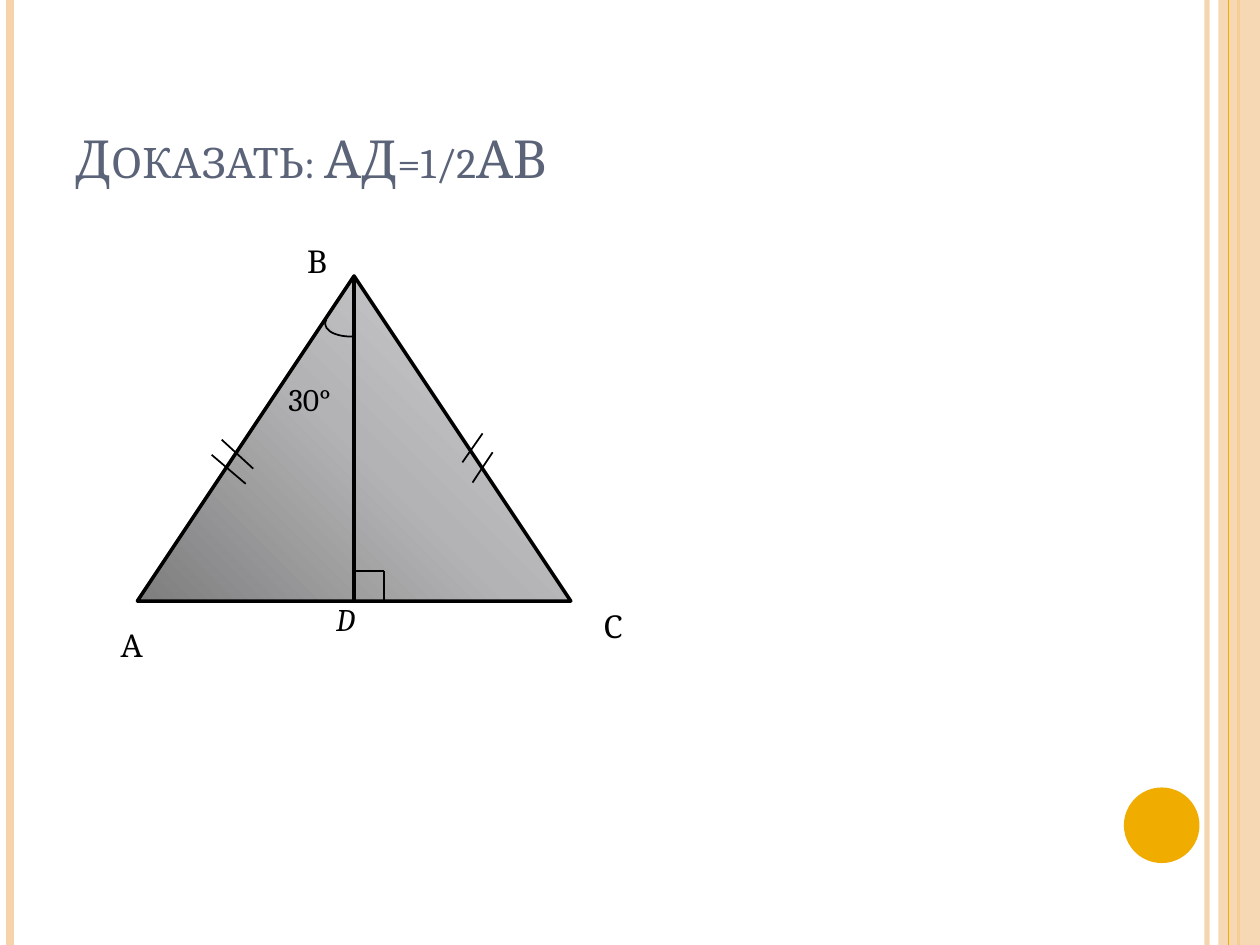
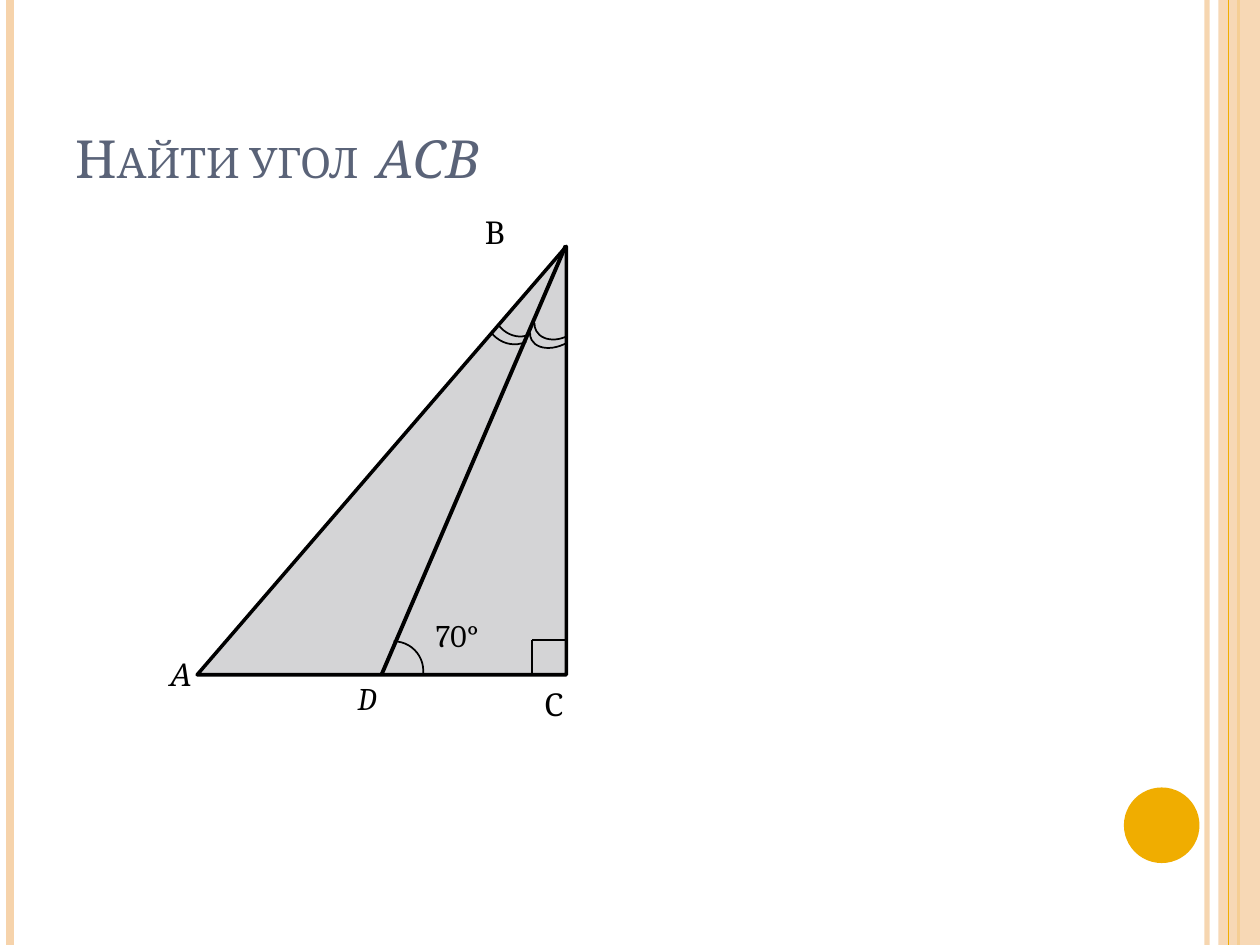
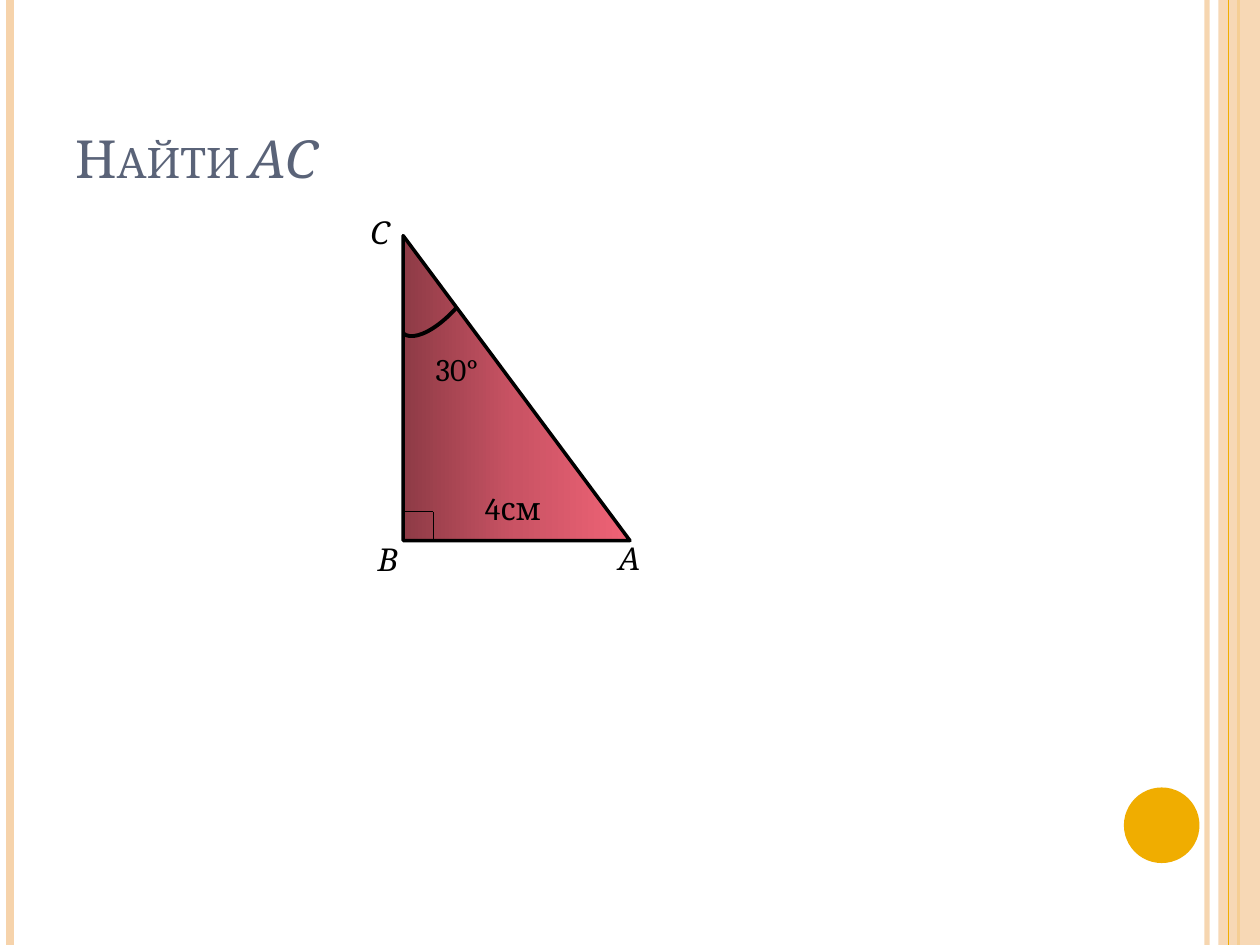
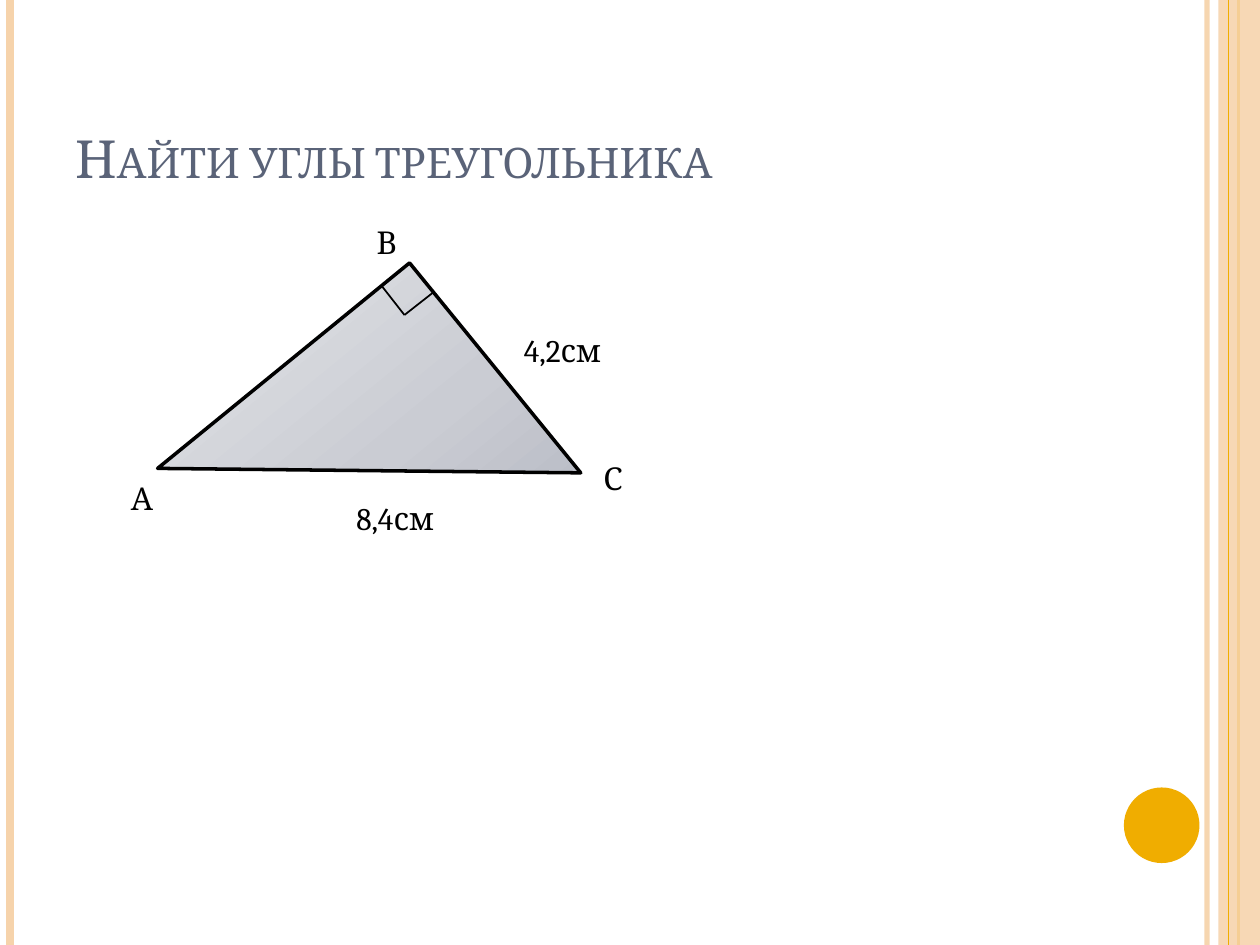
from dataclasses import dataclass
from itertools import pairwise

from lxml import etree
from pptx import Presentation
from pptx.dml.color import RGBColor
from pptx.enum.shapes import MSO_CONNECTOR, MSO_SHAPE
from pptx.enum.text import MSO_ANCHOR, MSO_AUTO_SIZE
from pptx.oxml.ns import qn
from pptx.util import Inches, Pt

STRAIGHT = MSO_CONNECTOR.STRAIGHT
RECTANGLE = MSO_SHAPE.RECTANGLE
OVAL = MSO_SHAPE.OVAL
ARC = MSO_SHAPE.ARC
ISOSCELES = MSO_SHAPE.ISOSCELES_TRIANGLE
RIGHT_TRIANGLE = MSO_SHAPE.RIGHT_TRIANGLE
BOTTOM = MSO_ANCHOR.BOTTOM
FIT_TEXT = MSO_AUTO_SIZE.SHAPE_TO_FIT_TEXT

Point = tuple[float, float]
Box = tuple[float, float, float, float]


@dataclass(frozen=True)
class Theme:
    font: str = "Cambria"
    ink: str = "000000"
    title: str = "5A6378"
    peach: str = "F6D3AB"
    amber: str = "F0AD00"
    title_size: float = 30
    label_size: float = 18
    thin: float = 1
    side: float = 2
    bold: float = 2.25
    width: float = 10
    height: float = 7.5
    label_height: float = 0.4


THEME = Theme()


@dataclass(frozen=True)
class Stripe:
    x: float
    color: str
    width: float
    opacity: int = 100


@dataclass(frozen=True)
class Triangle:
    kind: MSO_SHAPE
    box: Box
    colors: tuple[str, ...]
    angle: int = 0
    rotation: float = 0


@dataclass(frozen=True)
class Label:
    text: str
    x: float
    y: float
    width: float = 0.55
    italic: bool = False
    wrap: bool = True


@dataclass(frozen=True)
class Stroke:
    """Straight segments through the given points."""
    points: tuple[Point, ...]
    width: float = THEME.thin


@dataclass(frozen=True)
class AngleArc:
    box: Box
    start: float
    end: float
    rotation: float = 0
    width: float = THEME.thin


@dataclass(frozen=True)
class Problem:
    title: str
    triangle: Triangle
    labels: tuple[Label, ...]
    strokes: tuple[Stroke, ...]
    arcs: tuple[AngleArc, ...] = ()
    title_italic: str = ""


LEFT_STRIPES = (
    Stripe(9.58, THEME.peach, 3, 93),
    Stripe(0.08, THEME.peach, 4.5),
    Stripe(9.83, THEME.amber, 1.5),
)
RIGHT_STRIPE = Stripe(9.75, THEME.amber, 0.75)
BAND: Box = (9.67, 0, 0.33, THEME.height)
DISC: Box = (8.92, 6.25, 0.6, 0.6)
TITLE: Box = (0.5, 0.3, 8.17, 1.25)

PROBLEMS = (
    Problem(
        "Доказать: АД=1/2АВ",
        Triangle(ISOSCELES, (1.09, 2.19, 3.44, 2.58),
                 ("7E7E7F", "B3B3B5", "D4D4D6"), angle=315),
        (
            Label("А", 0.86, 4.92, 0.63),
            Label("В", 2.34, 1.87, 0.63),
            Label("С", 4.69, 4.77, 0.63),
            Label("D", 2.57, 4.71, 0.63, italic=True),
            Label("30°", 2.19, 2.97, 0.63),
        ),
        (
            Stroke(((2.81, 2.19), (2.81, 4.77)), THEME.bold),
            Stroke(((1.68, 3.61), (1.95, 3.84))),
            Stroke(((1.76, 3.49), (2.01, 3.72))),
            Stroke(((3.83, 3.44), (3.67, 3.67))),
            Stroke(((3.91, 3.59), (3.75, 3.83))),
            Stroke(((2.82, 4.53), (3.05, 4.53), (3.05, 4.77))),
        ),
        (AngleArc((2.58, 2.44, 0.47, 0.23), 162, 5.66, 175.5),),
    ),
    Problem(
        "Найти угол  ",
        Triangle(RIGHT_TRIANGLE, (1.33, 2.19, 3.4, 2.93), ("D4D4D6",), rotation=270),
        (
            Label("В", 3.75, 1.64, 0.38, wrap=False),
            Label("А", 1.25, 5.15, 0.38, italic=True, wrap=False),
            Label("D", 2.74, 5.34, italic=True),
            Label("С", 4.22, 5.39),
            Label("70°", 3.36, 4.84, 0.7),
        ),
        (
            Stroke(((4.49, 1.95), (3.03, 5.35)), THEME.bold),
            Stroke(((4.49, 5.08), (4.22, 5.08), (4.22, 5.34))),
        ),
        (
            AngleArc((2.89, 5.09, 0.47, 0.47), 162, 4.18),
            AngleArc((3.92, 2.26, 0.37, 0.42), 167.31, 0, 142),
            AngleArc((3.85, 2.27, 0.43, 0.47), 167.87, 0, 142),
            AngleArc((4.23, 2.37, 0.42, 0.31), 164.54, 10.59, 151.2),
            AngleArc((4.19, 2.43, 0.47, 0.31), 162, 9.16, 151.2),
        ),
        title_italic="АСВ",
    ),
    Problem(
        "Найти ",
        Triangle(RIGHT_TRIANGLE, (3.2, 1.87, 1.8, 2.42), ("8E3B46", "CA5364", "EF6376")),
        (
            Label("В", 2.9, 4.24, italic=True),
            Label("А", 4.81, 4.23, italic=True),
            Label("С", 2.84, 1.64, italic=True),
            Label("30°", 3.36, 2.73, 0.86),
            Label("4см", 3.75, 3.83, 0.78),
        ),
        (Stroke(((3.2, 4.06), (3.44, 4.06), (3.44, 4.3))),),
        (AngleArc((3.03, 2.09, 0.94, 0.39), 169.74, 0, 129.6, THEME.bold),),
        title_italic="АС",
    ),
    Problem(
        "Найти углы треугольника",
        Triangle(RIGHT_TRIANGLE, (1.64, 2.66, 2.58, 2.15),
                 ("A8ADB8", "CACCD3", "E5E6E9"), angle=90, rotation=140.8),
        (
            Label("А", 0.94, 3.75, 0.39),
            Label("В", 2.89, 1.72, 0.39),
            Label("С", 4.69, 3.59, 0.39),
            Label("4,2см", 4.06, 2.58, 1.17),
            Label("8,4см", 2.73, 3.91, 1.17),
        ),
        (Stroke(((3.03, 2.27), (3.21, 2.5), (3.44, 2.32))),),
    ),
)


def rgb(color: str) -> RGBColor:
    return RGBColor.from_string(color)


def set_opacity(sp, percent: int) -> None:
    for clr in sp._element.spPr.iter(qn("a:srgbClr")):
        etree.SubElement(clr, qn("a:alpha"), val=str(percent * 1000))


def set_gradient(sp, colors: tuple[str, ...], angle: int) -> None:
    """Spread the colours evenly along a linear gradient, clockwise angle."""
    sp.fill.gradient()
    grad = sp._element.spPr.find(qn("a:gradFill"))
    for child in list(grad):
        grad.remove(child)
    grad.set("rotWithShape", "1")
    stops = etree.SubElement(grad, qn("a:gsLst"))
    for i, color in enumerate(colors):
        position = 100000 * i // (len(colors) - 1)
        stop = etree.SubElement(stops, qn("a:gs"), pos=str(position))
        etree.SubElement(stop, qn("a:srgbClr"), val=color)
    etree.SubElement(grad, qn("a:lin"), ang=str(angle * 60000), scaled="0")


def add_line(slide, start: Point, end: Point, color: str, width: float):
    ends = (Inches(v) for v in (*start, *end))
    line = slide.shapes.add_connector(STRAIGHT, *ends)
    line.line.color.rgb = rgb(color)
    line.line.width = Pt(width)
    etree.SubElement(line._element.spPr, qn("a:effectLst"))
    return line


def add_shape(slide, kind: MSO_SHAPE, box: Box, fill: str = "", line_width: float = 0):
    sp = slide.shapes.add_shape(kind, *(Inches(v) for v in box))
    sp.shadow.inherit = False
    if fill:
        sp.fill.solid()
        sp.fill.fore_color.rgb = rgb(fill)
    else:
        sp.fill.background()
    if line_width:
        sp.line.color.rgb = rgb(THEME.ink)
        sp.line.width = Pt(line_width)
    else:
        sp.line.fill.background()
    return sp


def add_text_box(slide, box: Box, wrap: bool = True):
    tf = slide.shapes.add_textbox(*(Inches(v) for v in box)).text_frame
    tf.word_wrap = wrap
    return tf


def style_run(r, size: float, color: str, italic: bool = False) -> None:
    r.font.name = THEME.font
    r.font.size = Pt(size)
    r.font.color.rgb = rgb(color)
    r.font.italic = italic


def add_stripe(slide, stripe: Stripe) -> None:
    line = add_line(slide, (stripe.x, 0), (stripe.x, THEME.height),
                    stripe.color, stripe.width)
    if stripe.opacity < 100:
        set_opacity(line, stripe.opacity)


def add_frame(slide) -> None:
    """Draw the stripes, band and disc that every slide carries."""
    for stripe in LEFT_STRIPES:
        add_stripe(slide, stripe)
    set_opacity(add_shape(slide, RECTANGLE, BAND, THEME.peach), 87)
    add_stripe(slide, RIGHT_STRIPE)
    add_shape(slide, OVAL, DISC, THEME.amber)


def add_title(slide, text: str, italic_text: str) -> None:
    tf = add_text_box(slide, TITLE)
    tf.vertical_anchor = BOTTOM
    p = tf.paragraphs[0]
    p.text = text
    if italic_text:
        p.add_run().text = italic_text
    for i, r in enumerate(p.runs):
        style_run(r, THEME.title_size, THEME.title, italic=i > 0)
        r._r.get_or_add_rPr().set("cap", "small")


def add_triangle(slide, triangle: Triangle) -> None:
    sp = add_shape(slide, triangle.kind, triangle.box, triangle.colors[0], THEME.side)
    sp.rotation = triangle.rotation
    if len(triangle.colors) > 1:
        set_gradient(sp, triangle.colors, triangle.angle)


def add_stroke(slide, stroke: Stroke) -> None:
    for start, end in pairwise(stroke.points):
        add_line(slide, start, end, THEME.ink, stroke.width)


def add_arc(slide, arc: AngleArc) -> None:
    sp = add_shape(slide, ARC, arc.box, line_width=arc.width)
    sp.adjustments[0] = arc.start
    sp.adjustments[1] = arc.end
    sp.rotation = arc.rotation


def add_label(slide, label: Label) -> None:
    box = (label.x, label.y, label.width, THEME.label_height)
    tf = add_text_box(slide, box, label.wrap)
    tf.auto_size = FIT_TEXT
    tf.text = label.text
    style_run(tf.paragraphs[0].runs[0], THEME.label_size, THEME.ink, label.italic)


def add_problem(prs, problem: Problem) -> None:
    slide = prs.slides.add_slide(prs.slide_layouts[6])
    add_frame(slide)
    add_title(slide, problem.title, problem.title_italic)
    add_triangle(slide, problem.triangle)
    for stroke in problem.strokes:
        add_stroke(slide, stroke)
    for label in problem.labels:
        add_label(slide, label)
    for arc in problem.arcs:
        add_arc(slide, arc)


def main() -> None:
    prs = Presentation()
    prs.slide_width = Inches(THEME.width)
    prs.slide_height = Inches(THEME.height)
    for problem in PROBLEMS:
        add_problem(prs, problem)
    prs.save("out.pptx")


if __name__ == "__main__":
    main()
